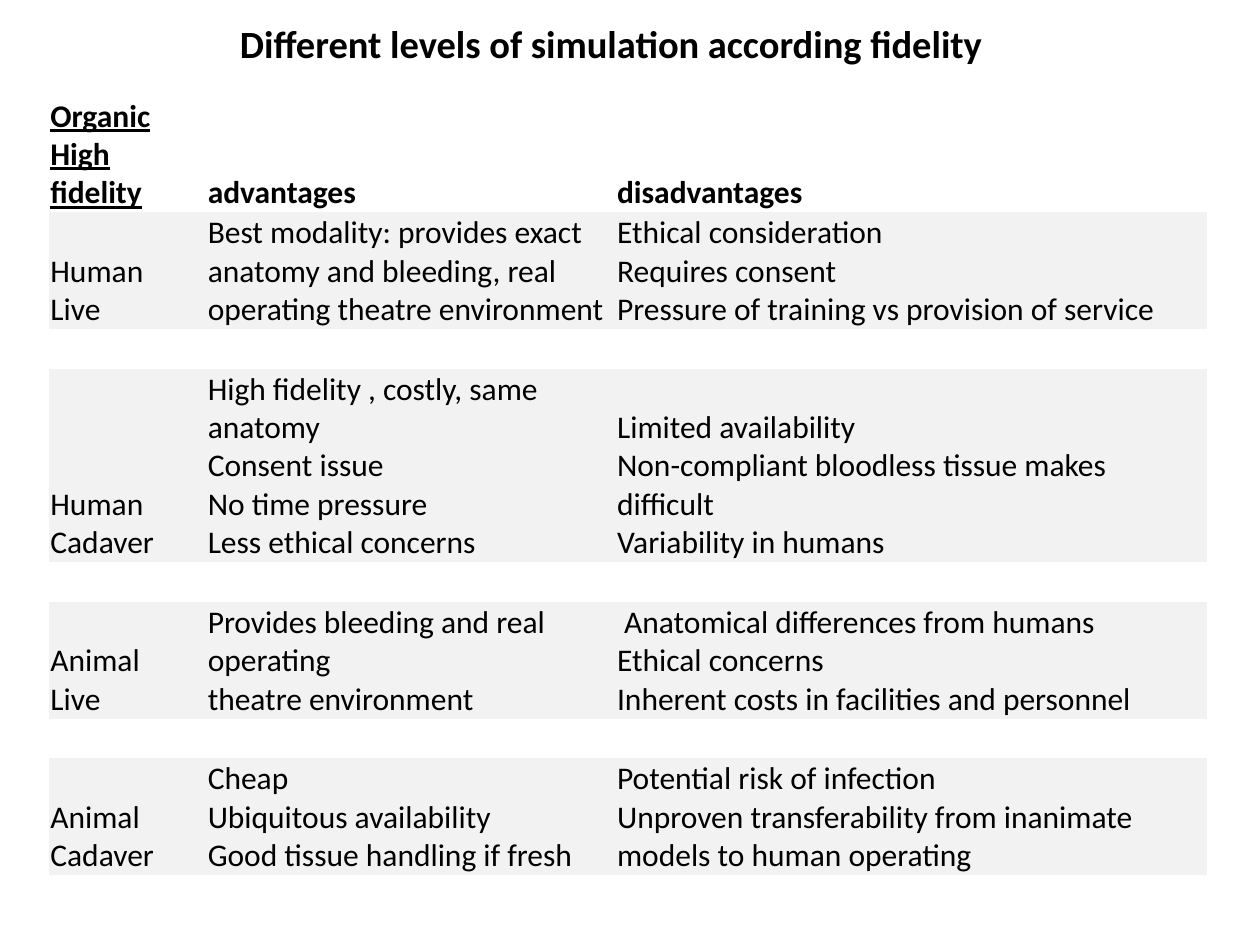
from pptx import Presentation
from pptx.dml.color import RGBColor
from pptx.enum import text
from pptx.oxml import ns
from pptx.util import Inches, Pt

FONT = "Calibri"
BLACK = RGBColor(0x00, 0x00, 0x00)
BAND = RGBColor(0xF2, 0xF2, 0xF2)
NO_STYLE_NO_GRID = "{2D5ABB26-0587-4C30-8999-92F81FD0307C}"

TITLE = "Different levels of simulation according fidelity"
COLUMN_WIDTHS = [1.11, 0.08, 0.05, 3.19, 0.05, 4.69]
TEXT_COLUMNS = [0, 3, 5]  # the others are narrow spacers
LINE_HEIGHT = 0.3
HEADER = (["Organic", "High fidelity"], ["advantages"], ["disadvantages"])

# Each level: lines of text in its row, then its three cells
LEVELS = [
    (3, (["Human", "Live"],
         ["Best modality: provides exact anatomy and bleeding, "
          "real operating theatre environment"],
         ["Ethical consideration", "Requires consent",
          "Pressure of training vs provision of service"])),
    (5, (["Human", "Cadaver"],
         ["High fidelity , costly, same anatomy", "Consent issue",
          "No time pressure", "Less ethical concerns"],
         ["Limited availability",
          "Non-compliant bloodless tissue makes difficult",
          "Variability in humans"])),
    (3, (["Animal", "Live"],
         ["Provides bleeding and real operating", "theatre environment"],
         [" Anatomical differences from humans", "Ethical concerns",
          "Inherent costs in facilities and personnel"])),
    (3, (["Animal", "Cadaver"],
         ["Cheap", "Ubiquitous availability", "Good tissue handling if fresh"],
         ["Potential risk of infection",
          "Unproven transferability from inanimate models to human operating"])),
]


def write_lines(tf, lines, size, bold=False, underline=None):
    for i, line in enumerate(lines):
        p = tf.paragraphs[0] if i == 0 else tf.add_paragraph()
        r = p.add_run()
        r.text = line
        r.font.name = FONT
        r.font.size = Pt(size)
        r.font.bold = bold
        r.font.underline = underline
        r.font.color.rgb = BLACK


def add_title(s):
    sp = s.shapes.add_textbox(Inches(0.35), 0, Inches(9), Inches(0.68))
    tf = sp.text_frame
    tf.word_wrap = True
    tf.vertical_anchor = text.MSO_ANCHOR.MIDDLE
    write_lines(tf, [TITLE], 22, bold=True)
    tf.paragraphs[0].alignment = text.PP_ALIGN.CENTER


def prepare_cell(cell, banded):
    cell.margin_left = cell.margin_right = cell.margin_top = Inches(0.01)
    cell.margin_bottom = 0
    cell.vertical_anchor = text.MSO_ANCHOR.BOTTOM
    if banded:
        cell.fill.solid()
        cell.fill.fore_color.rgb = BAND
    else:
        cell.fill.background()


def fill_row(table, row, line_count, contents=(), header=False):
    table.rows[row].height = Inches(line_count * LINE_HEIGHT + 0.01)
    for cell in table.rows[row].cells:
        prepare_cell(cell, banded=bool(contents) and not header)
    for col, lines in zip(TEXT_COLUMNS, contents):
        write_lines(table.cell(row, col).text_frame, lines, 18, bold=header,
                    underline=True if header and col == 0 else None)


def add_fidelity_table(s):
    """Header, then one banded row per level with blank rows between."""
    frame = s.shapes.add_table(2 * len(LEVELS), len(COLUMN_WIDTHS), Inches(0.39),
                               Inches(0.76), Inches(sum(COLUMN_WIDTHS)), Inches(6.08))
    table = frame.table
    table.first_row = table.horz_banding = False
    table._tbl.tblPr.find(ns.qn("a:tableStyleId")).text = NO_STYLE_NO_GRID
    for column, width in zip(table.columns, COLUMN_WIDTHS):
        column.width = Inches(width)
    fill_row(table, 0, 3, HEADER, header=True)
    for i, (line_count, contents) in enumerate(LEVELS):
        if i:
            fill_row(table, 2 * i, 1)
        fill_row(table, 2 * i + 1, line_count, contents)


def main():
    prs = Presentation()
    prs.slide_width, prs.slide_height = Inches(10), Inches(7.5)
    s = prs.slides.add_slide(prs.slide_layouts[6])
    add_fidelity_table(s)
    add_title(s)
    prs.save("out.pptx")


if __name__ == "__main__":
    main()
